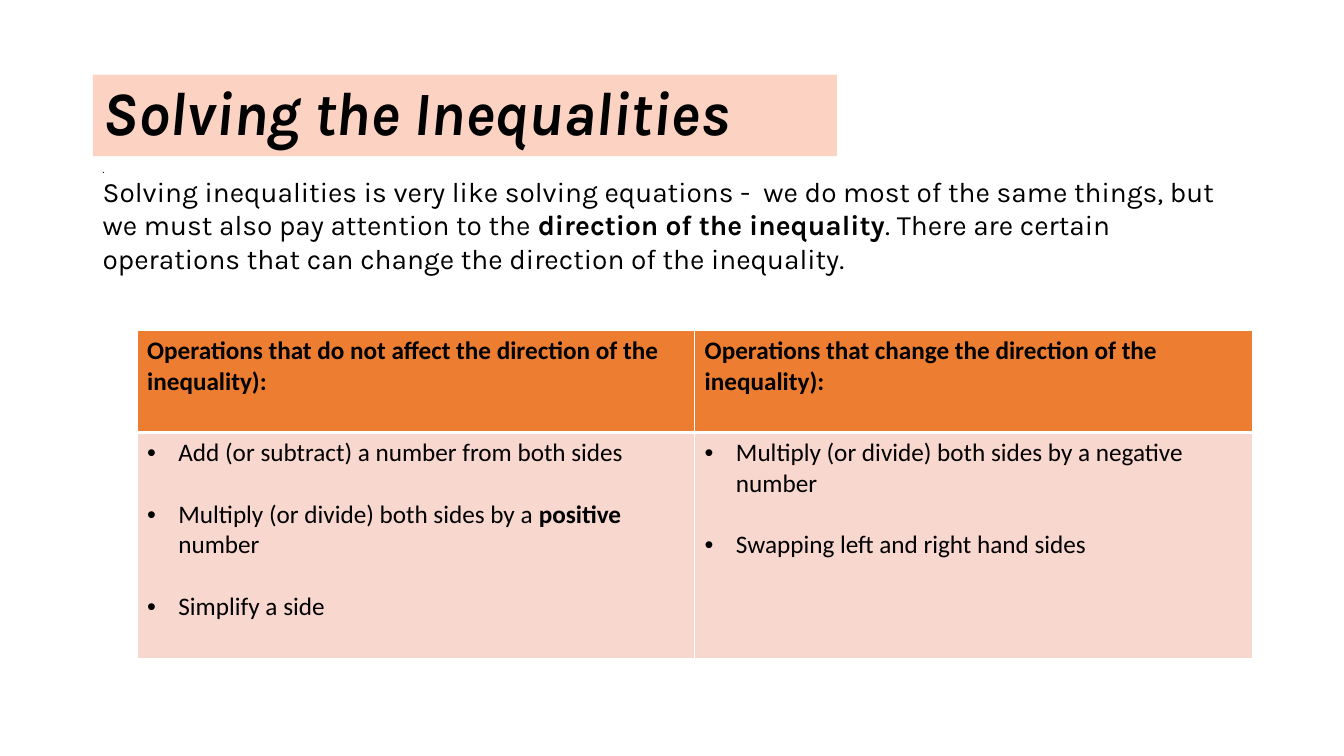
import dataclasses

import lxml.etree
import pptx
import pptx.dml.color
import pptx.enum.shapes
import pptx.enum.text
import pptx.oxml.ns
import pptx.util

Inches = pptx.util.Inches
Pt = pptx.util.Pt
qn = pptx.oxml.ns.qn


def rgb(code):
    return pptx.dml.color.RGBColor.from_string(code)


@dataclasses.dataclass(frozen=True)
class Theme:
    heading_font: str = "Karla"
    table_font: str = "Calibri"
    ink: str = "000000"
    banner: str = "FCD3C2"
    header: str = "ED7D31"
    body: str = "F8D7CE"
    rule: str = "FFFFFF"
    title_size: int = 44
    intro_size: int = 20
    table_size: int = 18
    mark_size: int = 8


class SlideBuilder:
    def __init__(self, slide, theme):
        self.slide = slide
        self.theme = theme

    def add_runs(self, paragraph, runs, spacing=None, **font_format):
        """Fill a paragraph with runs; every second run is bold."""
        for name, value in (spacing or {}).items():
            setattr(paragraph, name, value)
        for position, wording in enumerate(runs):
            run = paragraph.add_run()
            run.text = wording
            values = {"bold": position % 2 == 1, **font_format}
            for name, value in values.items():
                setattr(run.font, name, value)
            run.font.color.rgb = rgb(self.theme.ink)

    def banner(self, box, title):
        banner = self.slide.shapes.add_shape(
            pptx.enum.shapes.MSO_SHAPE.RECTANGLE, *map(Inches, box))
        banner.shadow.inherit = False
        banner.fill.solid()
        banner.fill.fore_color.rgb = rgb(self.theme.banner)
        banner.line.fill.background()
        frame = banner.text_frame
        frame.word_wrap = True
        frame.vertical_anchor = pptx.enum.text.MSO_ANCHOR.MIDDLE
        spacing = {"alignment": pptx.enum.text.PP_ALIGN.LEFT, "line_spacing": 0.9}
        self.add_runs(frame.paragraphs[0], [title], spacing, bold=True, italic=True,
                      name=self.theme.heading_font, size=Pt(self.theme.title_size))

    def text(self, box, runs, size):
        frame = self.slide.shapes.add_textbox(*map(Inches, box)).text_frame
        frame.word_wrap = True
        self.add_runs(frame.paragraphs[0], runs,
                      name=self.theme.heading_font, size=Pt(size))

    def bullet(self, paragraph):
        properties = paragraph._p.get_or_add_pPr()
        properties.set("marL", str(Inches(0.31)))
        properties.set("indent", str(-Inches(0.31)))
        lxml.etree.SubElement(properties, qn("a:buFont"), typeface="Arial")
        lxml.etree.SubElement(properties, qn("a:buChar"), char="•")

    def fill_cell(self, cell, color, bottom_width):
        """Draw the cell's four rules, then its fill."""
        properties = cell._tc.get_or_add_tcPr()
        widths = {"a:lnL": 1, "a:lnR": 1, "a:lnT": 1, "a:lnB": bottom_width}
        for side, width in widths.items():
            line = lxml.etree.SubElement(properties, qn(side), w=str(Pt(width)))
            solid = lxml.etree.SubElement(line, qn("a:solidFill"))
            lxml.etree.SubElement(solid, qn("a:srgbClr"), val=self.theme.rule)
        cell.fill.solid()
        cell.fill.fore_color.rgb = rgb(color)

    def table(self, box, row_heights, columns):
        """Add a table from (heading, bullet items) pairs, one per column."""
        theme = self.theme
        table = self.slide.shapes.add_table(
            len(row_heights), len(columns), *map(Inches, box)).table
        for row, height in zip(table.rows, row_heights):
            row.height = Inches(height)
        table_font = {"name": theme.table_font, "size": Pt(theme.table_size)}
        for column, (heading, items) in enumerate(columns):
            header, body = table.cell(0, column), table.cell(1, column)
            self.fill_cell(header, theme.header, 3)
            self.add_runs(header.text_frame.paragraphs[0], [heading],
                          bold=True, **table_font)
            self.fill_cell(body, theme.body, 1)
            frame = body.text_frame
            for position, runs in enumerate(items):
                paragraph = frame.add_paragraph() if position else frame.paragraphs[0]
                self.bullet(paragraph)
                spacing = {"space_before": Pt(22)} if position else {}
                self.add_runs(paragraph, runs, spacing, **table_font)


INTRO = [
    "Solving inequalities is very like solving equations -  we do most of the same "
    "things, but we must also pay attention to the ",
    "direction of the inequality",
    ". There are certain operations that can change the direction of the inequality.",
]
OPERATIONS = [
    ("Operations that do not affect the direction of the inequality):", [
        ["Add (or subtract) a number from both sides"],
        ["Multiply (or divide) both sides by a ", "positive", " number"],
        ["Simplify a side"],
    ]),
    ("Operations that change the direction of the inequality):", [
        ["Multiply (or divide) both sides by a negative number"],
        ["Swapping left and right hand sides"],
    ]),
]


def main():
    presentation = pptx.Presentation()
    presentation.slide_width = Inches(13.33)
    presentation.slide_height = Inches(7.5)
    theme = Theme()
    builder = SlideBuilder(
        presentation.slides.add_slide(presentation.slide_layouts[6]), theme)
    builder.banner((0.92, 0.74, 7.38, 0.81), "Solving the Inequalities")
    builder.text((0.92, 1.56, 11.5, 5.33), ["."], theme.mark_size)
    builder.text((0.92, 1.68, 11.5, 4.95), INTRO, theme.intro_size)
    builder.table((1.36, 3.28, 11.06, 3.25), (1.01, 2.24), OPERATIONS)
    presentation.save("out.pptx")


if __name__ == "__main__":
    main()
